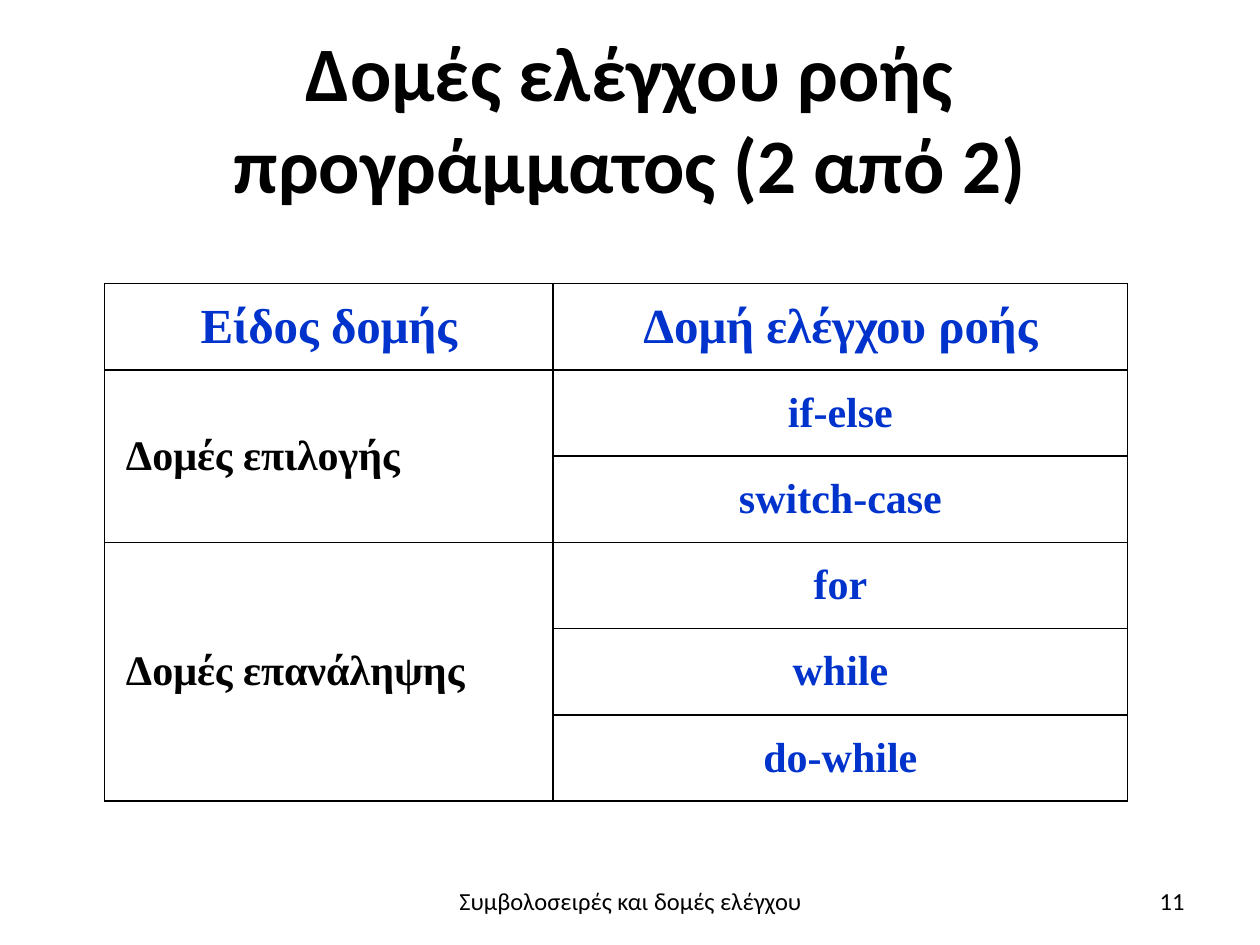
from typing import NamedTuple

from lxml.etree import SubElement
from pptx import Presentation
from pptx.dml.color import RGBColor
from pptx.enum.text import MSO_ANCHOR as Anchor, PP_ALIGN as Align
from pptx.oxml.ns import qn
from pptx.util import Inches, Pt

BLACK = RGBColor(0x00, 0x00, 0x00)
BLUE = RGBColor(0x00, 0x33, 0xCC)
BODY_FONT = "Calibri"
TABLE_FONT = "Times New Roman"
ROW_HEIGHT = 4.11 / 6
COLUMN_WIDTHS = (3.56, 4.56)


class Style(NamedTuple):
    size: int
    color: RGBColor = BLACK
    font: str = BODY_FONT
    bold: bool = False
    align: Align = Align.CENTER


class Group(NamedTuple):
    kind: str
    structures: tuple[str, ...]


class FooterItem(NamedTuple):
    text: str
    left: float
    width: float
    align: Align


TITLE = Style(44, bold=True)
HEADING = Style(28, BLUE, TABLE_FONT, True)
KIND = Style(24, BLACK, TABLE_FONT, True, Align.LEFT)
STRUCTURE = Style(24, BLUE, TABLE_FONT, True)

HEADINGS = ("Είδος δομής", "Δομή ελέγχου ροής")
GROUPS = (
    Group("Δομές επιλογής", ("if-else", "switch-case")),
    Group("Δομές επανάληψης", ("for", "while", "do-while")),
)
FOOTER = (
    FooterItem("Συμβολοσειρές και δομές ελέγχου", 3.42, 3.17, Align.CENTER),
    FooterItem("11", 7.17, 2.33, Align.RIGHT),
)


def write(frame, text: str, style: Style) -> None:
    frame.text = text
    frame.word_wrap = True
    paragraph = frame.paragraphs[0]
    paragraph.alignment = style.align
    for run in paragraph.runs:
        font = run.font
        font.name, font.size, font.bold = style.font, Pt(style.size), style.bold
        font.color.rgb = style.color


def add_borders(cell) -> None:
    properties = cell._tc.get_or_add_tcPr()
    for side in ("a:lnL", "a:lnR", "a:lnT", "a:lnB"):
        line = SubElement(properties, qn(side), w=str(Pt(1)))
        fill = SubElement(line, qn("a:solidFill"))
        SubElement(fill, qn("a:srgbClr"), val=str(BLACK))


def fill_cell(cell, text: str, style: Style) -> None:
    write(cell.text_frame, text, style)
    cell.vertical_anchor = Anchor.MIDDLE
    # Row labels sit slightly away from the border
    cell.margin_left = Inches(0.17 if style.align == Align.LEFT else 0.1)


def add_structure_table(slide) -> None:
    row_count = 1 + sum(len(group.structures) for group in GROUPS)
    table = slide.shapes.add_table(
        row_count, len(HEADINGS), Inches(0.83), Inches(2.25),
        Inches(sum(COLUMN_WIDTHS)), Inches(ROW_HEIGHT * row_count)).table
    table.first_row = table.horz_banding = False
    for column, width in zip(table.columns, COLUMN_WIDTHS):
        column.width = Inches(width)
    for row in table.rows:
        row.height = Inches(ROW_HEIGHT)
    for cell in table.iter_cells():
        add_borders(cell)
        cell.fill.background()

    for column, heading in enumerate(HEADINGS):
        fill_cell(table.cell(0, column), heading, HEADING)
    first = 1
    for group in GROUPS:
        last = first + len(group.structures) - 1
        table.cell(first, 0).merge(table.cell(last, 0))
        fill_cell(table.cell(first, 0), group.kind, KIND)
        for row, structure in enumerate(group.structures, first):
            fill_cell(table.cell(row, 1), structure, STRUCTURE)
        first = last + 1


def add_footer_item(slide, item: FooterItem) -> None:
    box = slide.shapes.add_textbox(
        Inches(item.left), Inches(6.95), Inches(item.width), Inches(0.4))
    write(box.text_frame, item.text, Style(14, align=item.align))
    box.text_frame.vertical_anchor = Anchor.MIDDLE


def main() -> None:
    deck = Presentation()
    deck.slide_width, deck.slide_height = Inches(10), Inches(7.5)
    slide = deck.slides.add_slide(deck.slide_layouts[5])

    # Title
    title = slide.shapes.title
    title.left, title.top = Inches(0.5), Inches(0.3)
    title.width, title.height = Inches(9), Inches(1.25)
    write(title.text_frame, "Δομές ελέγχου ροής προγράμματος (2 από 2)", TITLE)
    title.text_frame.vertical_anchor = Anchor.MIDDLE

    # Table of control structures
    add_structure_table(slide)

    # Footer and page number
    for item in FOOTER:
        add_footer_item(slide, item)

    deck.save("out.pptx")


if __name__ == "__main__":
    main()
